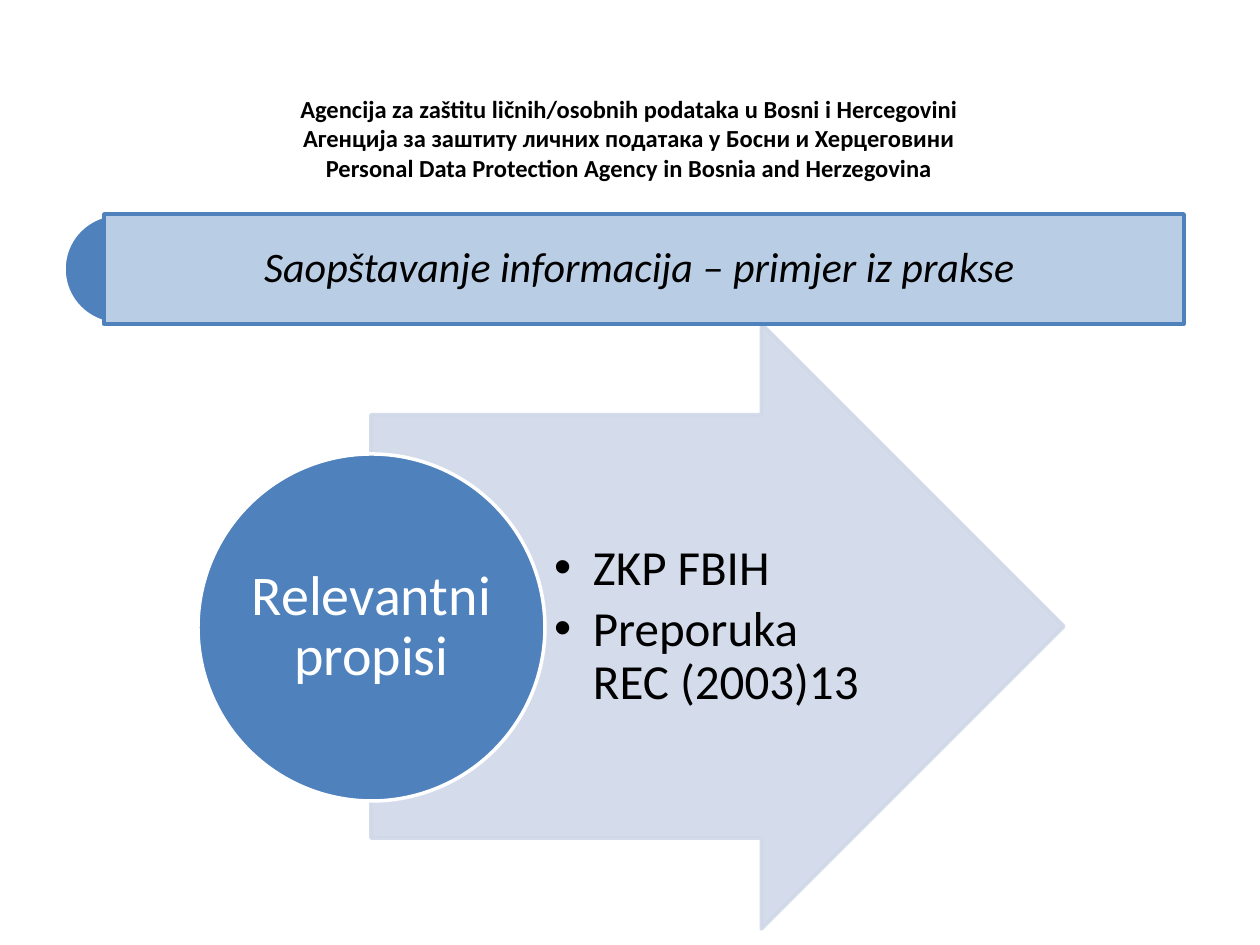
from lxml import etree
from pptx import Presentation
from pptx.dml.color import RGBColor
from pptx.enum.shapes import MSO_SHAPE
from pptx.enum.text import MSO_ANCHOR, MSO_AUTO_SIZE, PP_ALIGN
from pptx.oxml.ns import qn
from pptx.util import Pt

PX = 914400 / 126
ARROW, CIRCLE, PIE = MSO_SHAPE.RIGHT_ARROW, MSO_SHAPE.OVAL, MSO_SHAPE.PIE
CENTER, LEFT = PP_ALIGN.CENTER, PP_ALIGN.LEFT
TOP, MIDDLE = MSO_ANCHOR.TOP, MSO_ANCHOR.MIDDLE
NO_FIT = MSO_AUTO_SIZE.NONE

BLUE, PALE, BANNER = "4F81BD", "D0D8E8", "B9CDE5"
BLACK, WHITE = "000000", "FFFFFF"

AGENCY_NAMES = [
    "Agencija za zaštitu ličnih/osobnih podataka u Bosni i Hercegovini",
    "Агенција за заштиту личних података у Босни и Херцеговини",
    "Personal Data Protection Agency in Bosnia and Herzegovina",
]
REGULATIONS = ["ZKP FBIH", "Preporuka REC (2003)13"]


def px(length):
    return round(length * PX)


def color(value):
    return RGBColor.from_string(value)


def apply(target, values):
    for name, value in values.items():
        setattr(target, name, value)


def place(shape, left, top, width, height):
    apply(shape, {"left": px(left), "top": px(top),
                  "width": px(width), "height": px(height)})


def paint(shape, fill, line):
    shape.fill.solid()
    shape.fill.fore_color.rgb = color(fill)
    shape.line.color.rgb = color(line)
    shape.line.width = Pt(2)


def set_opacity(shape, percent):
    for tint in shape._element.spPr.iter(qn("a:srgbClr")):
        etree.SubElement(tint, qn("a:alpha"), val=str(percent * 1000))


def add_figure(page, kind, bounds, fill, line, adjustments=()):
    shape = page.shapes.add_shape(kind, *map(px, bounds))
    shape.shadow.inherit = False
    paint(shape, fill, line)
    for index, value in enumerate(adjustments):
        shape.adjustments[index] = value
    return shape


def bring_to_front(shape):
    shape._element.getparent().append(shape._element)


def write(shape, lines, font, margins=(0, 0, 0, 0), anchor=MIDDLE,
          align=CENTER, spacing=0.9, after=0, indent=0):
    frame = shape.text_frame
    sides = ("margin_left", "margin_top", "margin_right", "margin_bottom")
    apply(frame, {"word_wrap": True, "auto_size": NO_FIT,
                  "vertical_anchor": anchor})
    apply(frame, dict(zip(sides, map(px, margins))))
    for index, line in enumerate(lines):
        para = frame.paragraphs[0] if index == 0 else frame.add_paragraph()
        apply(para, {"alignment": align, "line_spacing": spacing,
                     "space_before": Pt(0), "space_after": Pt(after)})
        if indent:
            properties = para._p.get_or_add_pPr()
            properties.set("marL", str(px(indent)))
            properties.set("indent", str(-px(indent)))
        span = para.add_run()
        span.text = line
        values = {"name": "Calibri", "bold": False, "italic": False, **font}
        span.font.color.rgb = color(values.pop("color"))
        apply(span.font, values)


def add_header(page):
    box = page.shapes.add_textbox(*map(px, (265, 88, 728, 102)))
    write(box, AGENCY_NAMES, {"size": Pt(14), "bold": True, "color": BLACK},
          (13, 6, 13, 6), TOP, spacing=1.0)


def add_regulations(page):
    arrow = add_figure(page, ARROW, (371, 324, 693, 605), PALE, PALE, (0.7, 0.5))
    set_opacity(arrow, 90)
    body = page.placeholders[1]
    place(body, 544, 415, 338, 423)
    bring_to_front(body)
    write(body, REGULATIONS, {"size": Pt(28), "color": BLACK},
          (10, 2, 5, 2), align=LEFT, after=4.2, indent=39)
    circle = add_figure(page, CIRCLE, (198, 454, 347, 347), BLUE, WHITE)
    write(circle, ["Relevantni propisi"], {"size": Pt(32), "color": WHITE})


def add_banner(page):
    add_figure(page, PIE, (64, 214, 110, 110), BLUE, WHITE, (54, 162))
    title = page.shapes.title
    place(title, 104, 214, 1080, 110)
    paint(title, BANNER, BLUE)
    bring_to_front(title)
    write(title, ["Saopštavanje informacija – primjer iz prakse "],
          {"size": Pt(24), "italic": True, "color": BLACK}, (12, 12, 12, 12))


def main():
    deck = Presentation()
    apply(deck, {"slide_width": px(1260), "slide_height": px(945)})
    page = deck.slides.add_slide(deck.slide_layouts[1])
    add_header(page)
    add_regulations(page)
    add_banner(page)
    deck.save("out.pptx")


if __name__ == "__main__":
    main()
